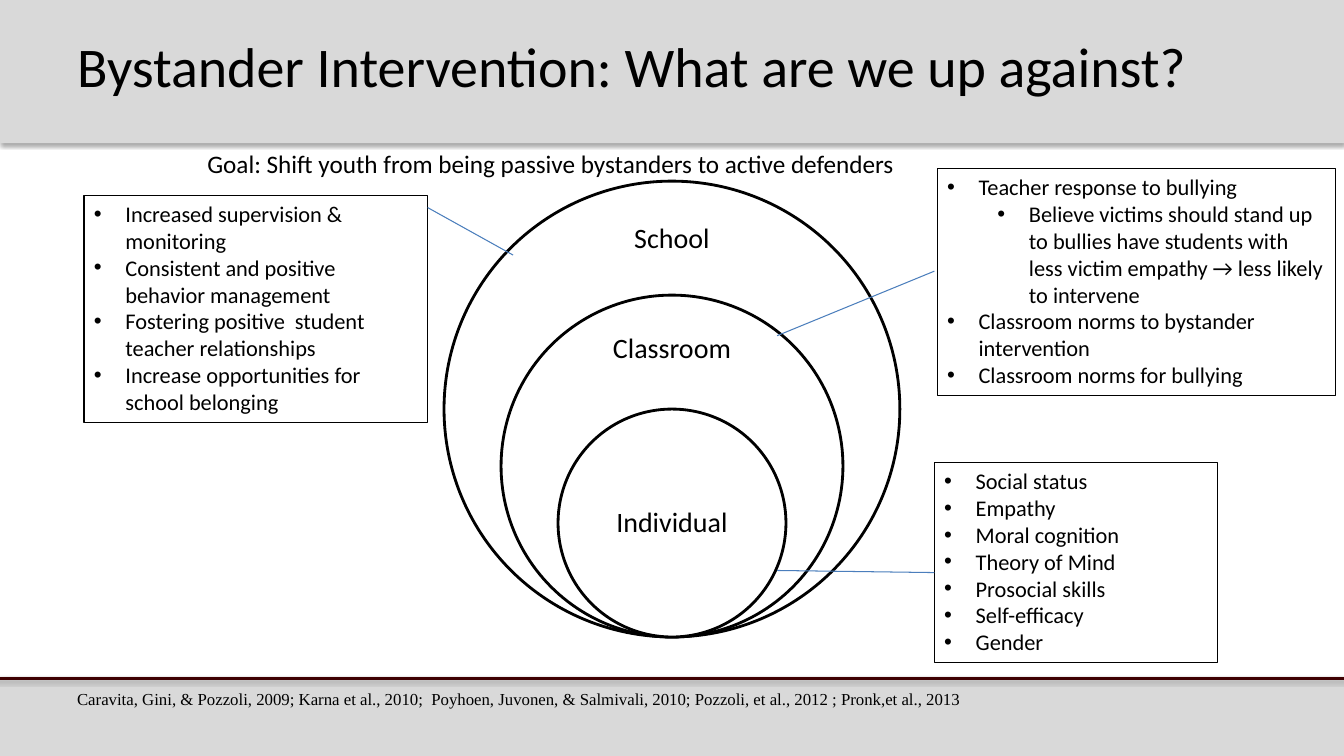
from pptx import Presentation
from pptx.dml.color import RGBColor
from pptx.enum.shapes import MSO_CONNECTOR, MSO_SHAPE
from pptx.enum.text import MSO_ANCHOR, PP_ALIGN
from pptx.oxml import parse_xml
from pptx.oxml.ns import nsdecls
from pptx.util import Pt

WIDTH, HEIGHT = 960, 540
CENTER_X, CIRCLES_BOTTOM, SCHOOL_SIZE = 480, 455, 325.6


def color(value):
    return RGBColor.from_string(value)


def add_effects(sp, alpha=None, dist=1.8):
    shadow = ""
    if alpha:
        shadow = (f'<a:outerShdw blurRad="{Pt(3.1)}" dist="{Pt(dist)}" dir="5400000" rotWithShape="0">'
                  f'<a:srgbClr val="000000"><a:alpha val="{alpha * 1000}"/></a:srgbClr></a:outerShdw>')
    sp.element.spPr.append(parse_xml(f'<a:effectLst {nsdecls("a")}>{shadow}</a:effectLst>'))


def add_shape(s, kind, left, top, width, height, fill=None, line=None, weight=0.75, alpha=None):
    sp = s.shapes.add_shape(kind, Pt(left), Pt(top), Pt(width), Pt(height))
    if fill:
        sp.fill.solid()
        sp.fill.fore_color.rgb = color(fill)
    else:
        sp.fill.background()
    if line:
        sp.line.color.rgb = color(line)
        sp.line.width = Pt(weight)
    else:
        sp.line.fill.background()
    add_effects(sp, alpha)
    return sp


def add_line(s, x1, y1, x2, y2, line="4B7EBC", weight=0.75, alpha=None):
    sp = s.shapes.add_connector(MSO_CONNECTOR.STRAIGHT, Pt(x1), Pt(y1), Pt(x2), Pt(y2))
    sp.line.color.rgb = color(line)
    sp.line.width = Pt(weight)
    add_effects(sp, alpha, dist=1.6)


def format_font(font, size, name="Calibri"):
    font.size = Pt(size)
    font.name = name
    font.color.rgb = color("000000")


def add_text(s, text, left, top, width, height, size, font="Calibri", align=PP_ALIGN.LEFT,
             anchor=MSO_ANCHOR.TOP, spacing=None):
    tf = s.shapes.add_textbox(Pt(left), Pt(top), Pt(width), Pt(height)).text_frame
    tf.word_wrap = True
    tf.vertical_anchor = anchor
    p = tf.paragraphs[0]
    p.alignment = align
    p.line_spacing = spacing
    r = p.add_run()
    r.text = text
    format_font(r.font, size, font)


def add_bullet_box(s, items, left, top, width, height):
    sp = add_shape(s, MSO_SHAPE.RECTANGLE, left, top, width, height, line="000000")
    tf = sp.text_frame
    tf.word_wrap = True
    tf.vertical_anchor = MSO_ANCHOR.TOP
    for i, (text, level) in enumerate(items):
        p = tf.paragraphs[0] if i == 0 else tf.add_paragraph()
        p.alignment = PP_ALIGN.LEFT
        p.level = level
        pPr = p._p.get_or_add_pPr()
        pPr.set("marL", str(Pt(22.5 + 36 * level)))
        pPr.set("indent", str(Pt(-22.5)))
        pPr.append(parse_xml(f'<a:buFont {nsdecls("a")} typeface="Arial"/>'))
        pPr.append(parse_xml(f'<a:buChar {nsdecls("a")} char="•"/>'))
        r = p.add_run()
        r.text = text
        format_font(r.font, 16)


def add_circle(s, label, scale, label_top, label_height):
    size = SCHOOL_SIZE * scale
    add_shape(s, MSO_SHAPE.OVAL, CENTER_X - size / 2, CIRCLES_BOTTOM - size, size, size,
              fill="FFFFFF", line="000000", weight=2)
    add_text(s, label, CENTER_X - 57, label_top, 114, label_height, 20,
             align=PP_ALIGN.CENTER, anchor=MSO_ANCHOR.MIDDLE, spacing=0.9)


def main():
    prs = Presentation()
    prs.slide_width, prs.slide_height = Pt(WIDTH), Pt(HEIGHT)
    s = prs.slides.add_slide(prs.slide_layouts[6])

    add_shape(s, MSO_SHAPE.RECTANGLE, 0, 484.6, WIDTH, 55.4, fill="D9D9D9", alpha=35)
    add_line(s, -3.6, 484.6, 965.5, 484.6, line="3E0001", weight=2, alpha=38)
    add_shape(s, MSO_SHAPE.RECTANGLE, 0, 0, WIDTH, 102.2, fill="D9D9D9", alpha=35)

    for label, scale, top, height in [("School", 1, 146.2, 49), ("Classroom", 0.75, 226.8, 46),
                                      ("Individual", 0.5, 333.4, 81.4)]:
        add_circle(s, label, scale, top, height)

    add_text(s, "Goal: Shift youth from being passive bystanders to active defenders",
             141, 102.2, 628.6, 29, 18)

    school = [("Increased supervision & monitoring", 0),
              ("Consistent and positive behavior management", 0),
              ("Fostering positive  student teacher relationships", 0),
              ("Increase opportunities for school belonging", 0)]
    classroom = [("Teacher response to bullying", 0),
                 ("Believe victims should stand up to bullies have students with "
                  "less victim empathy → less likely to intervene", 1),
                 ("Classroom norms to bystander intervention", 0),
                 ("Classroom norms for bullying", 0)]
    individual = [(text, 0) for text in ("Social status", "Empathy", "Moral cognition", "Theory of Mind",
                                         "Prosocial skills", "Self-efficacy", "Gender")]
    add_bullet_box(s, school, 60, 139.4, 245.5, 162.5)
    add_bullet_box(s, classroom, 669.4, 120.2, 284.6, 162.5)
    add_bullet_box(s, individual, 667.4, 330.2, 202.5, 143)

    add_line(s, 305.5, 148.3, 366.5, 182.2)
    add_line(s, 555.1, 239.8, 667.4, 193.7)
    add_line(s, 555.1, 407.5, 667.4, 409)

    add_text(s, "Caravita, Gini, & Pozzoli, 2009; Karna et al., 2010;  Poyhoen, Juvonen, & Salmivali, 2010; "
                "Pozzoli, et al., 2012 ; Pronk,et al., 2013", 48, 488.2, 681, 21.8, 12, font="Times New Roman")
    add_text(s, "Bystander Intervention: What are we up against?", 48, 18.7, 840, 55.7, 40)

    prs.save("out.pptx")


if __name__ == "__main__":
    main()
